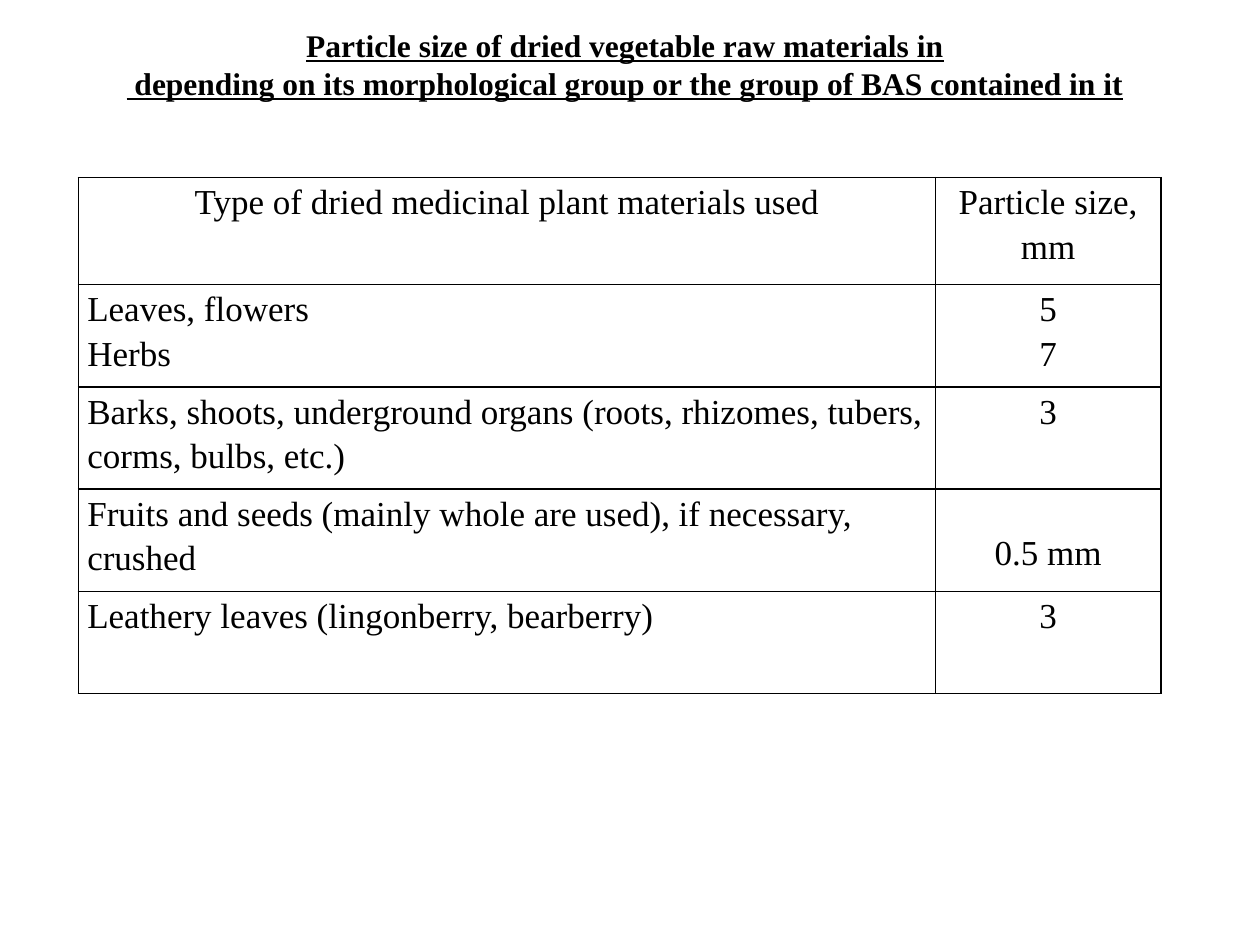
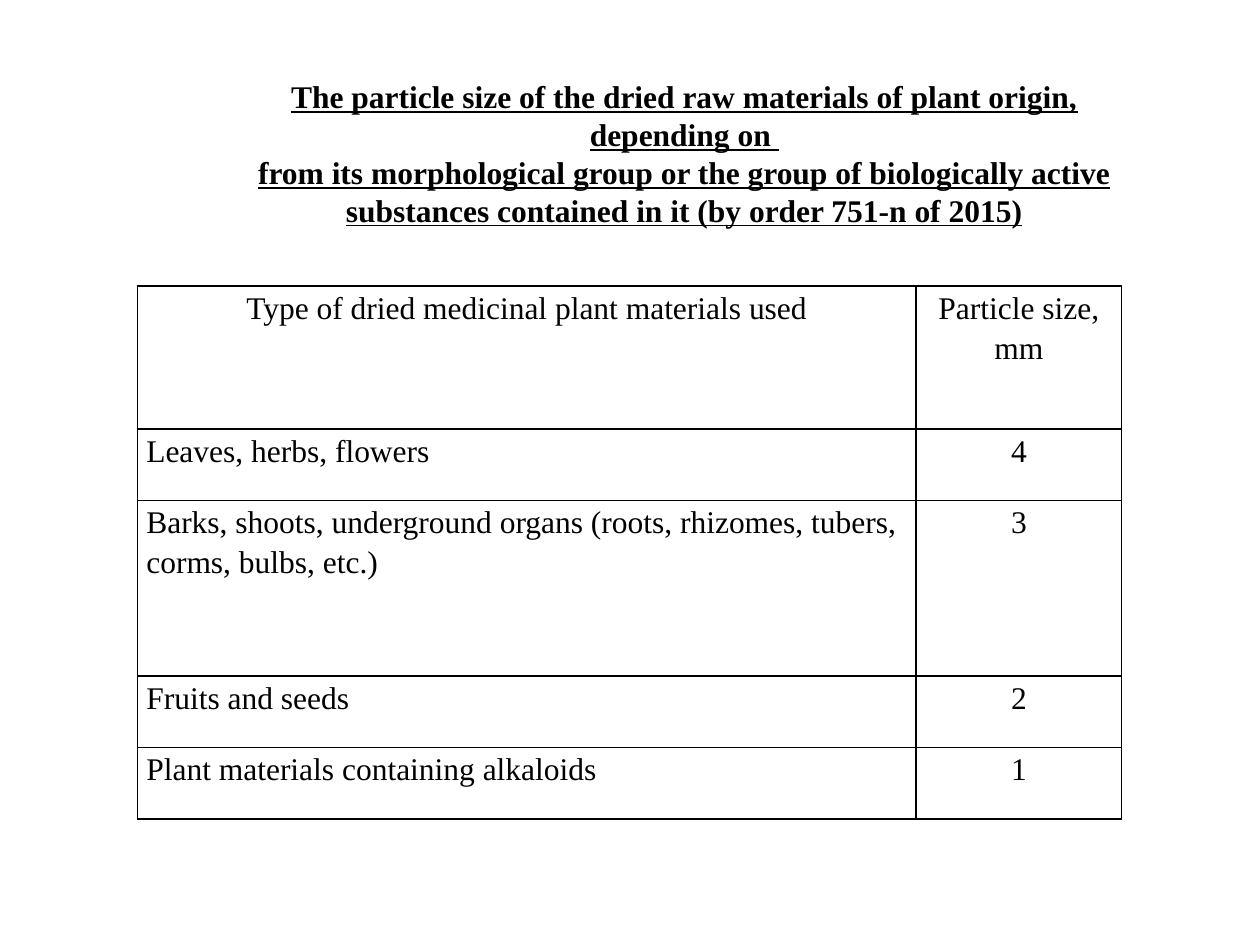
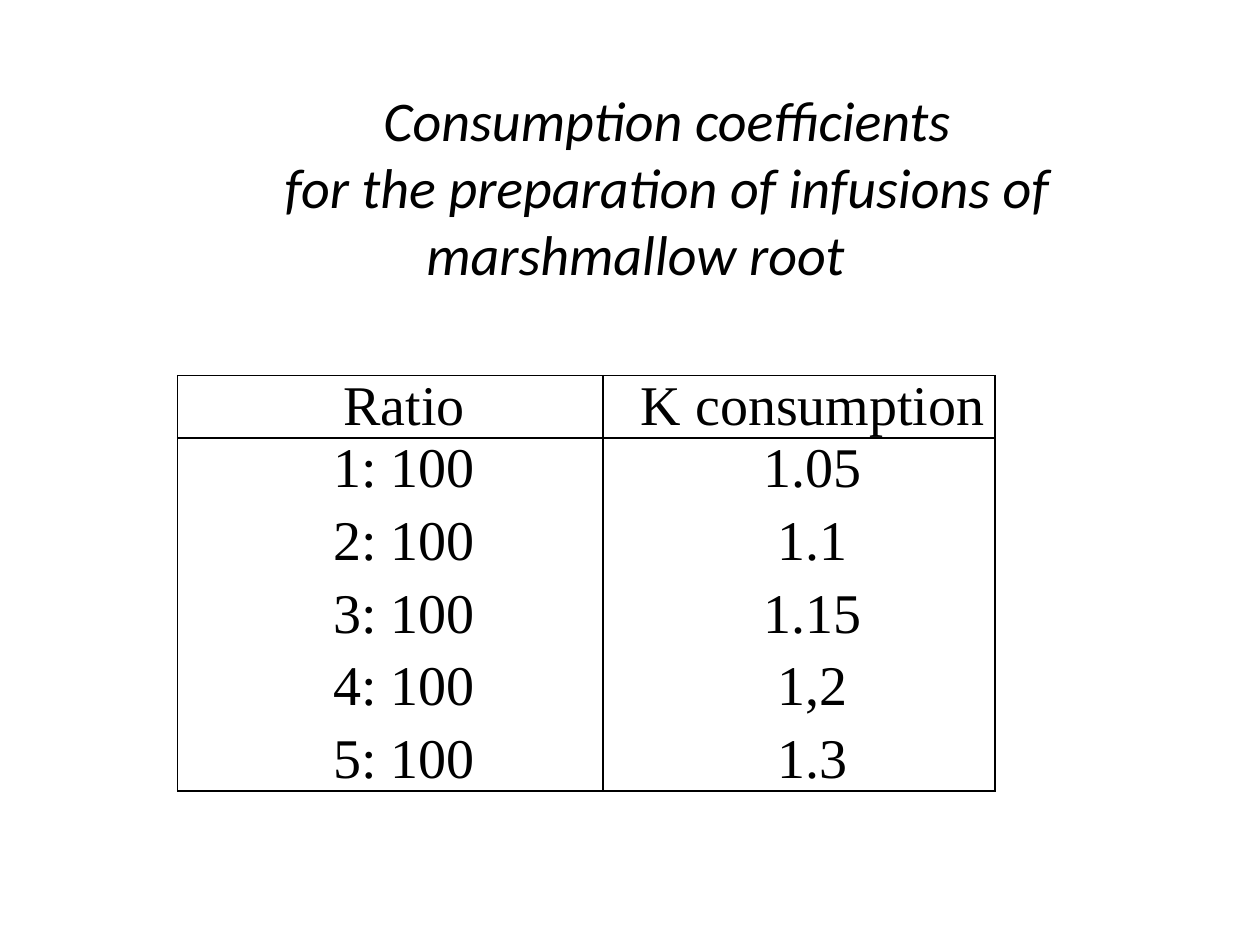
from dataclasses import dataclass

from lxml import etree
from pptx import Presentation
from pptx.dml.color import RGBColor
from pptx.enum import text
from pptx.oxml import ns
from pptx.util import Cm, Pt


@dataclass(frozen=True)
class Theme:
    ink: str = "000000"
    serif: str = "Times New Roman"
    sans: str = "Calibri"
    small: int = 18
    medium: int = 20
    large: int = 32
    border: int = 1


theme = Theme()
ink = RGBColor.from_string(theme.ink)
center, left = text.PP_ALIGN.CENTER, text.PP_ALIGN.LEFT


def write(frame, content, alignment, font, indent=(0, 0), spacing=None):
    """Fill a text frame, one paragraph for each line of the content."""
    frame.word_wrap = True
    frame.text = content
    for paragraph in frame.paragraphs:
        properties = paragraph._p.get_or_add_pPr()
        properties.set("marL", str(Cm(indent[0])))
        properties.set("indent", str(Cm(indent[1])))
        paragraph.alignment = alignment
        for name, value in (spacing or {}).items():
            setattr(paragraph, name, value)
        for run in paragraph.runs:
            run.font.color.rgb = ink
            for name, value in font.items():
                setattr(run.font, name, value)


def draw_borders(cell):
    properties = cell._tc.get_or_add_tcPr()
    for side in ("lnL", "lnR", "lnT", "lnB"):
        line = etree.SubElement(properties, ns.qn(f"a:{side}"), w=str(Pt(theme.border)))
        fill = etree.SubElement(line, ns.qn("a:solidFill"))
        etree.SubElement(fill, ns.qn("a:srgbClr"), val=theme.ink)


# Formats shared by the slides
heading = {"name": theme.serif, "size": Pt(theme.small), "bold": True, "underline": True}
loose = {"line_spacing": 1.15}
header = ("Type of dried medicinal plant materials used", "Particle size, mm")
barks = "Barks, shoots, underground organs (roots, rhizomes, tubers, corms, bulbs, etc.)"

# Content: boxes are left, top, width, height in centimetres
slides = [
    {
        "title": "Particle size of dried vegetable raw materials in\n"
                 " depending on its morphological group or the group of BAS contained in it",
        "title_box": (1.78, 0, 21.64, 3.2), "title_font": heading,
        "title_indent": 0, "bottom": 0.76,
        "corner": (1.58, 3.58), "columns": (17.28, 4.54),
        "heights": (2.16, 2.06, 2.06, 2.06, 2.06),
        "size": theme.medium, "body_alignment": left, "indent": (0, 0), "spacing": loose,
        "rows": [
            header,
            ("Leaves, flowers\nHerbs", "5\n7"),
            (barks, "3"),
            ("Fruits and seeds (mainly whole are used), if necessary, crushed", "0.5 mm"),
            ("Leathery leaves (lingonberry, bearberry)", "3"),
        ],
        "lowered": {(3, 1): 0.8},
    },
    {
        "title": "The particle size of the dried raw materials of plant origin, depending on \n"
                 "from its morphological group or the group of biologically active "
                 "substances contained in it (by order 751-n of 2015)",
        "title_box": (4.17, 1.4, 19.25, 3.99), "title_font": heading,
        "title_indent": 0, "bottom": 0.76,
        "corner": (2.77, 5.77), "columns": (15.7, 4.14),
        "heights": (2.88, 1.44, 3.54, 1.44, 1.44),
        "size": theme.small, "body_alignment": left, "indent": (0, 0), "spacing": loose,
        "rows": [
            header,
            ("Leaves, herbs, flowers", "4"),
            (barks, "3"),
            ("Fruits and seeds", "2"),
            ("Plant materials containing alkaloids", "1"),
        ],
        "lowered": {},
    },
    {
        "title": "Consumption coefficients\n"
                 "for the preparation of infusions of marshmallow root",
        "title_box": (2.59, 1.57, 20.45, 5.74),
        "title_font": {"name": theme.sans, "size": Pt(theme.large), "italic": True},
        "title_indent": 1.27, "bottom": 1.5,
        "corner": (3.58, 7.57), "columns": (8.58, 7.9), "heights": (1.25, 7.12),
        "size": theme.large, "body_alignment": center, "indent": (0.5, 0.05),
        "spacing": {"space_after": Pt(6)},
        "rows": [
            ("Ratio", "K consumption"),
            ("1: 100\n2: 100\n3: 100\n4: 100\n5: 100", "1.05\n1.1\n1.15\n1,2\n1.3"),
        ],
        "lowered": {},
    },
]

presentation = Presentation()
presentation.slide_width, presentation.slide_height = Cm(25.4), Cm(19.05)

for content in slides:
    slide = presentation.slides.add_slide(presentation.slide_layouts[5])

    # Title
    title = slide.shapes.title
    for name, value in zip(("left", "top", "width", "height"), content["title_box"]):
        setattr(title, name, Cm(value))
    frame = title.text_frame
    frame_format = {
        "auto_size": text.MSO_AUTO_SIZE.NONE,
        "vertical_anchor": text.MSO_ANCHOR.MIDDLE,
        "margin_left": Cm(0.25), "margin_right": Cm(0.25),
        "margin_top": Cm(0.13), "margin_bottom": Cm(content["bottom"]),
    }
    for name, value in frame_format.items():
        setattr(frame, name, value)
    write(frame, content["title"], center, content["title_font"],
          (0, content["title_indent"]))

    # Table grid
    rows, columns, heights = content["rows"], content["columns"], content["heights"]
    table = slide.shapes.add_table(
        len(rows), len(columns), *map(Cm, content["corner"]),
        Cm(sum(columns)), Cm(sum(heights))).table
    table.first_row = table.horz_banding = False
    for column, width in zip(table.columns, columns):
        column.width = Cm(width)
    for row, height in zip(table.rows, heights):
        row.height = Cm(height)

    # Table cells
    font = {"name": theme.serif, "size": Pt(content["size"])}
    for i, row in enumerate(rows):
        for j, words in enumerate(row):
            cell = table.cell(i, j)
            cell.margin_left = cell.margin_right = Cm(0.18)
            cell.margin_top = Cm(content["lowered"].get((i, j), 0))
            cell.margin_bottom = 0
            draw_borders(cell)
            cell.fill.background()
            alignment = content["body_alignment"] if i and not j else center
            write(cell.text_frame, words, alignment, font,
                  content["indent"], content["spacing"])

presentation.save("out.pptx")
